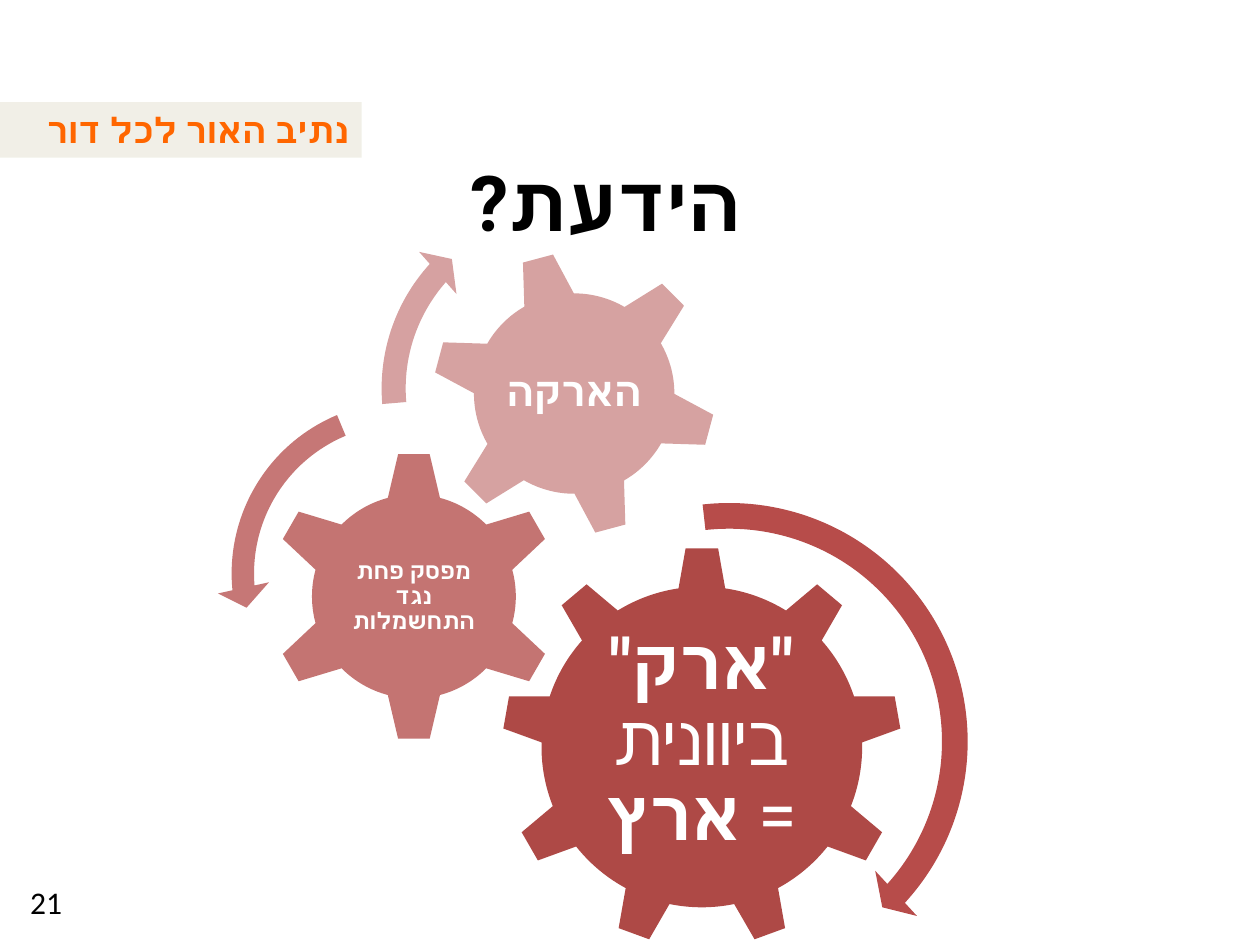
from lxml.etree import SubElement
from pptx import Presentation
from pptx.dml.color import RGBColor
from pptx.enum.shapes import MSO_SHAPE
from pptx.enum.text import MSO_ANCHOR, MSO_AUTO_SIZE, PP_ALIGN
from pptx.oxml.ns import qn
from pptx.util import Cm, Pt

WHITE = RGBColor(0xFF, 0xFF, 0xFF)
BLACK = RGBColor(0, 0, 0)
ORANGE = RGBColor(0xFF, 0x66, 0x00)
SAND = RGBColor(0xDD, 0xD9, 0xC3)
RED = RGBColor(0xAE, 0x49, 0x46)
ROSE = RGBColor(0xC4, 0x74, 0x72)
PINK = RGBColor(0xD6, 0xA2, 0xA1)
RED_ARC = RGBColor(0xB7, 0x4C, 0x4A)
ROSE_ARC = RGBColor(0xC6, 0x77, 0x76)
PINK_ARC = RGBColor(0xD6, 0xA1, 0xA1)

deck = Presentation()
deck.slide_width, deck.slide_height = Cm(25.4), Cm(19.05)
slide = deck.slides.add_slide(deck.slide_layouts[6])
shapes = slide.shapes


def draw(kind, left, top, width, height, color):
    shape = shapes.add_shape(kind, Cm(left), Cm(top), Cm(width), Cm(height))
    shape.shadow.inherit = False
    shape.fill.solid()
    shape.fill.fore_color.rgb = color
    shape.line.fill.background()
    return shape


def write(box, runs, size, color, align=PP_ALIGN.CENTER, face="Roboto"):
    """Fill a box with one right-to-left paragraph of (text, bold) runs."""
    frame = box.text_frame
    frame.word_wrap = True
    frame.vertical_anchor = MSO_ANCHOR.TOP
    para = frame.paragraphs[0]
    para.alignment = align
    para._p.get_or_add_pPr().set("rtl", "1")
    for text, bold in runs:
        run = para.add_run()
        run.text = text
        font = run.font
        font.size, font.bold, font.name = Pt(size), bold, face
        font.color.rgb = color
        SubElement(run._r.get_or_add_rPr(), qn("a:cs"), typeface=face)
    return frame


# Gears: kind, left, top, size, turn, color
gears = [
    (MSO_SHAPE.GEAR_9, 10.11, 11.02, 8.08, 0, RED),
    (MSO_SHAPE.GEAR_6, 5.41, 9.09, 5.87, 0, ROSE),
    (MSO_SHAPE.GEAR_6, 8.69, 5.05, 5.77, 345, PINK),
]
for kind, left, top, size, turn, color in gears:
    draw(kind, left, top, size, size, color).rotation = turn

# Gear labels: left, top, width, height, inset, font size, runs
labels = [
    (11.73, 12.9, 4.83, 4.14, 0.15, 40,
     [('"ארק" ', True), ("ביוונית = ", False), ("ארץ", True)]),
    (6.88, 10.59, 2.92, 2.9, 0.05, 13, [("מפסק פחת נגד התחשמלות", True)]),
    (9.96, 6.32, 3.23, 3.23, 0.08, 23, [("הארקה", True)]),
]
for left, top, width, height, inset, size, runs in labels:
    box = shapes.add_textbox(Cm(left), Cm(top), Cm(width), Cm(height))
    frame = write(box, runs, size, WHITE)
    frame.vertical_anchor = MSO_ANCHOR.MIDDLE
    frame.margin_left = frame.margin_right = Cm(inset)
    frame.margin_top = frame.margin_bottom = Cm(inset)
    frame.paragraphs[0].line_spacing = 0.9

# Curved arrows: kind, left, top, size, color, adjustments
arcs = [
    (MSO_SHAPE.CIRCULAR_ARROW, 9.53, 9.78, 10.34, RED_ARC,
     (0.05, 2.99, 25.37, 158.17, 0.06)),
    (MSO_SHAPE.LEFT_CIRCULAR_ARROW, 4.37, 7.8, 7.52, ROSE_ARC,
     (0.06, 4.3, 104.89, 148.38, 0.07)),
    (MSO_SHAPE.CIRCULAR_ARROW, 7.37, 3.78, 8.1, PINK_ARC,
     (0.06, 3.94, 133.14, 105.08, 0.07)),
]
for kind, left, top, size, color, values in arcs:
    arc = draw(kind, left, top, size, size, color)
    for i, value in enumerate(values):
        arc.adjustments[i] = value

# Title, header band and page number
title = shapes.add_textbox(Cm(8.51), Cm(3), Cm(7.39), Cm(2.13))
write(title, [("הידעת?", True)], 44, BLACK)

band = draw(MSO_SHAPE.RECTANGLE, -0.2, 2.06, 7.49, 1.12, SAND)
tint = band.fill._xPr.find(qn("a:solidFill"))[0]
SubElement(tint, qn("a:alpha"), val="40000")
write(band, [("נתיב האור לכל דור", True)], 20, ORANGE, PP_ALIGN.RIGHT)

page = shapes.add_textbox(Cm(0.05), Cm(17.68), Cm(1.45), Cm(1.02))
write(page, [("21", False)], 18, BLACK, PP_ALIGN.RIGHT, "Calibri")

for box in (title, band, page):
    box.text_frame.auto_size = MSO_AUTO_SIZE.SHAPE_TO_FIT_TEXT

deck.save("out.pptx")
